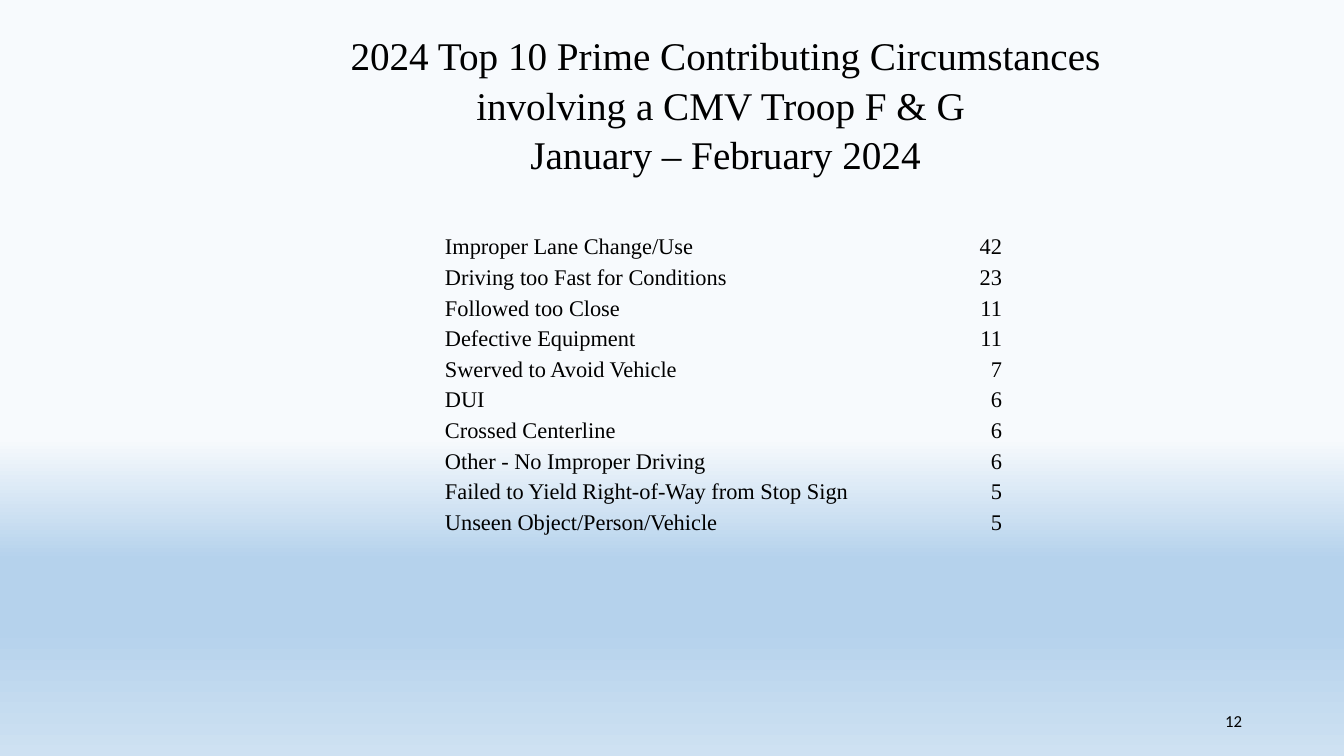
from dataclasses import dataclass

from lxml import etree
from pptx import Presentation
from pptx import util as u
from pptx.dml import color
from pptx.enum import text
from pptx.oxml import ns

PX = 914400 / 100.8
NO_STYLE_NO_GRID = "{2D5ABB26-0587-4C30-8999-92F81FD0307C}"


@dataclass(frozen=True)
class Theme:
    serif: str = "Times New Roman"
    sans: str = "Calibri"
    ink: str = "000000"
    title_size: int = 28
    table_size: int = 16
    number_size: int = 12
    # Position in percent, colour
    sky: tuple = ((58, "F7FAFD"), (74, "B5D2EC"), (83, "B5D2EC"), (100, "CEE1F2"))


THEME = Theme()

TITLE = [
    "2024 Top 10 Prime Contributing Circumstances involving a CMV Troop F & G ",
    "January – February 2024",
]
CIRCUMSTANCES = [
    ("Improper Lane Change/Use", 42),
    ("Driving too Fast for Conditions", 23),
    ("Followed too Close", 11),
    ("Defective Equipment", 11),
    ("Swerved to Avoid Vehicle", 7),
    ("DUI", 6),
    ("Crossed Centerline", 6),
    ("Other - No Improper Driving", 6),
    ("Failed to Yield Right-of-Way from Stop Sign", 5),
    ("Unseen Object/Person/Vehicle", 5),
]
SPARE_ROWS = 2


def px(length):
    return u.Emu(round(length * PX))


def write(frame, lines, size, font=THEME.serif, align=text.PP_ALIGN.LEFT, spacing=1.0):
    for index, line in enumerate(lines):
        para = frame.paragraphs[0] if index == 0 else frame.add_paragraph()
        para.alignment = align
        para.line_spacing = spacing
        para.space_before = u.Pt(0)
        span = para.add_run()
        span.text = line
        span.font.size = u.Pt(size)
        span.font.name = font
        span.font.color.rgb = color.RGBColor.from_string(THEME.ink)


def paint_background(page):
    fill = page.background.fill
    fill.gradient()
    fill.gradient_angle = 270
    stops = page.background._cSld.find(".//" + ns.qn("a:gsLst"))
    for stop in list(stops):
        stops.remove(stop)
    for percent, shade in THEME.sky:
        stop = etree.SubElement(stops, ns.qn("a:gs"), pos=str(percent * 1000))
        etree.SubElement(stop, ns.qn("a:srgbClr"), val=shade)


def place_title(page, left, top, width, height):
    title = page.shapes.title
    title.left, title.top, title.width, title.height = map(px, (left, top, width, height))
    frame = title.text_frame
    frame.word_wrap = True
    frame.auto_size = text.MSO_AUTO_SIZE.NONE
    frame.vertical_anchor = text.MSO_ANCHOR.TOP
    write(frame, TITLE, THEME.title_size, align=text.PP_ALIGN.CENTER, spacing=1.05)


def place_table(page, left, top, width, height, count_width):
    rows = len(CIRCUMSTANCES) + SPARE_ROWS
    holder = page.shapes.add_table(rows, 2, px(left), px(top), px(width), px(height))
    table = holder.table
    table.first_row = table.horz_banding = False
    table._tbl.tblPr.find(ns.qn("a:tableStyleId")).text = NO_STYLE_NO_GRID
    table.columns[0].width = px(width - count_width)
    table.columns[1].width = px(count_width)
    for row in table.rows:
        row.height = px(height / rows)
    for cell in table.iter_cells():
        cell.fill.background()
        cell.vertical_anchor = text.MSO_ANCHOR.BOTTOM
        cell.margin_left = cell.margin_right = cell.margin_top = px(1)
        cell.margin_bottom = 0
        cell.text_frame.paragraphs[0].font.size = u.Pt(THEME.table_size)
    for index, (cause, count) in enumerate(CIRCUMSTANCES):
        write(table.cell(index, 0).text_frame, [cause], THEME.table_size)
        write(table.cell(index, 1).text_frame, [str(count)], THEME.table_size,
              align=text.PP_ALIGN.RIGHT)


def place_page_number(page, number, left, top, width, height):
    frame = page.shapes.add_textbox(*map(px, (left, top, width, height))).text_frame
    frame.word_wrap = True
    frame.vertical_anchor = text.MSO_ANCHOR.MIDDLE
    write(frame, [str(number)], THEME.number_size, THEME.sans, text.PP_ALIGN.RIGHT)


def main():
    deck = Presentation()
    deck.slide_width, deck.slide_height = px(1344), px(756)
    page = deck.slides.add_slide(deck.slide_layouts.get_by_name("Title Only"))
    paint_background(page)
    place_title(page, 265, 24, 921, 336)
    place_table(page, 444, 229, 559, 368, count_width=90)
    place_page_number(page, 12, 950, 701, 302, 40)
    deck.save("out.pptx")


if __name__ == "__main__":
    main()
